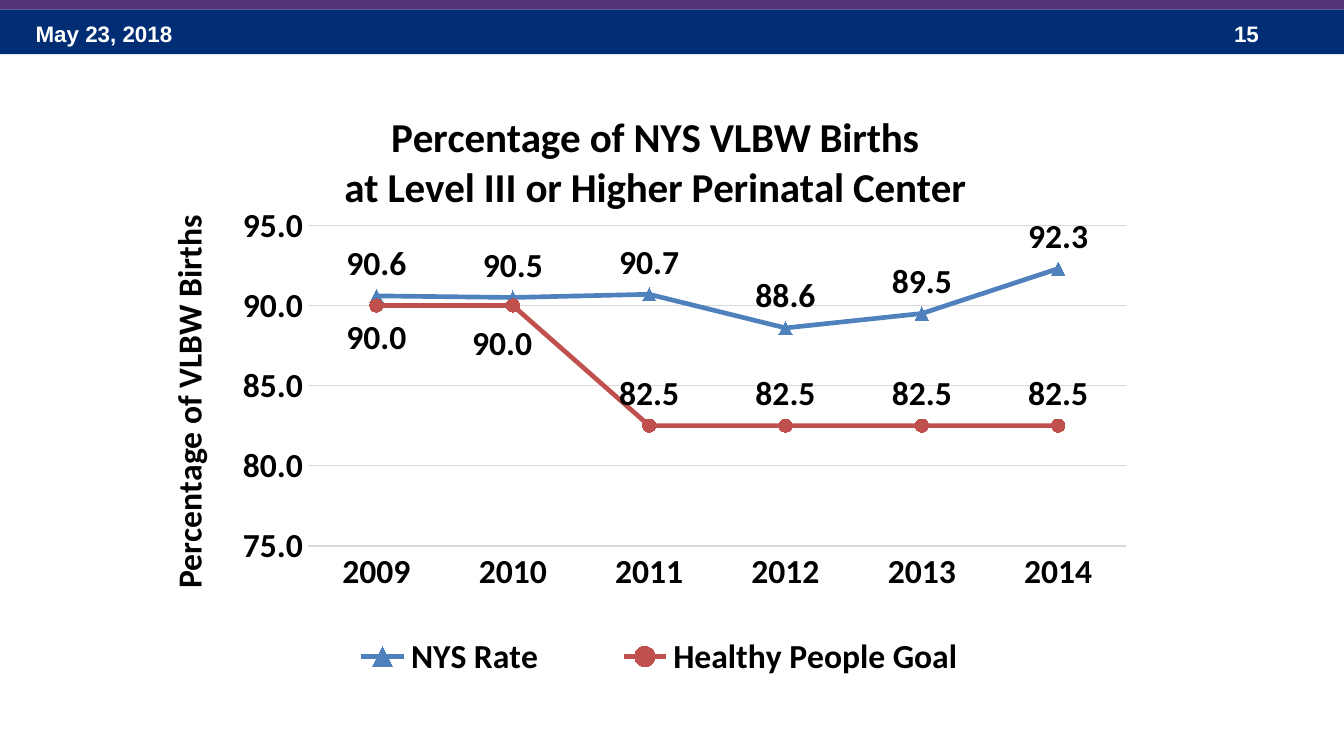
from dataclasses import dataclass

from lxml.etree import SubElement
from pptx import Presentation
from pptx.chart.data import CategoryChartData
from pptx.dml.color import RGBColor
from pptx.enum.chart import (XL_CHART_TYPE, XL_LABEL_POSITION, XL_LEGEND_POSITION,
                             XL_MARKER_STYLE, XL_TICK_MARK)
from pptx.enum.shapes import MSO_SHAPE
from pptx.enum.text import MSO_ANCHOR
from pptx.oxml import parse_xml
from pptx.oxml.ns import nsdecls, qn
from pptx.util import Pt


@dataclass(frozen=True)
class Theme:
    navy: str = "002D73"
    purple: str = "553278"
    white: str = "FFFFFF"
    black: str = "000000"
    grid: str = "D9D9D9"
    rate: str = "4F81BD"
    goal: str = "C0504D"
    header_font: str = "Arial"
    chart_font: str = "Calibri"
    header_size: int = 12
    chart_size: int = 18
    title_size: int = 22


def rgb(value):
    return RGBColor.from_string(value)


def layout_xml(target=None, absolute=True, **fractions):
    """Manual chart layout, in fractions of the chart's width and height."""
    layout = parse_xml(f"<c:layout {nsdecls('c')}><c:manualLayout/></c:layout>")
    manual = layout[0]
    if target:
        SubElement(manual, qn("c:layoutTarget")).set("val", target)
    if absolute:
        for axis in "xy":
            SubElement(manual, qn(f"c:{axis}Mode")).set("val", "edge")
    for name, value in fractions.items():
        SubElement(manual, qn(f"c:{name}")).set("val", str(value))
    return layout


def set_layout(element, after, **options):
    """Put a manual layout in a chart element, behind the child named after."""
    for old in element.findall(qn("c:layout")):
        element.remove(old)
    layout = layout_xml(**options)
    if after is None:
        element.insert(0, layout)
    else:
        element.find(qn(after)).addnext(layout)


class Deck:
    def __init__(self, theme):
        self.theme = theme
        self.prs = Presentation()
        self.prs.slide_width, self.prs.slide_height = Pt(720), Pt(405)
        self.s = self.prs.slides.add_slide(self.prs.slide_layouts[6])

    def font(self, font, name, size, color):
        font.name, font.size, font.bold = name, Pt(size), True
        font.color.rgb = rgb(color)

    def chart_text(self, font, size=None):
        t = self.theme
        self.font(font, t.chart_font, size or t.chart_size, t.black)

    def band(self, top, height, color):
        sp = self.s.shapes.add_shape(MSO_SHAPE.RECTANGLE, 0, Pt(top), Pt(720), Pt(height))
        sp.shadow.inherit = False
        sp.fill.solid()
        sp.fill.fore_color.rgb = rgb(color)
        sp.line.fill.background()

    def header_text(self, left, width, text):
        t = self.theme
        tf = self.s.shapes.add_textbox(Pt(left), Pt(7.2), Pt(width), Pt(21.6)).text_frame
        tf.word_wrap = True
        tf.vertical_anchor = MSO_ANCHOR.MIDDLE
        r = tf.paragraphs[0].add_run()
        r.text = text
        self.font(r.font, t.header_font, t.header_size, t.white)

    def chart_title(self, owner, lines, size, x, y):
        """Title a chart or an axis, one paragraph a line."""
        title = owner.chart_title if hasattr(owner, "chart_title") else owner.axis_title
        tf = title.text_frame
        for i, line in enumerate(lines):
            p = tf.add_paragraph() if i else tf.paragraphs[0]
            r = p.add_run()
            r.text = line
            self.chart_text(r.font, size)
        set_layout(title._element, "c:tx", x=x, y=y)

    def series(self, ser, color, marker):
        ser.smooth = False
        ser.format.line.width = Pt(2.5)
        ser.format.line.color.rgb = rgb(color)
        ser.marker.style, ser.marker.size = marker, 7
        ser.marker.format.fill.solid()
        ser.marker.format.fill.fore_color.rgb = rgb(color)
        ser.marker.format.line.color.rgb = rgb(color)
        labels = ser.data_labels
        labels.show_value = True
        labels.number_format, labels.number_format_is_linked = "#,##0.0", False
        labels.position = XL_LABEL_POSITION.ABOVE
        self.chart_text(labels.font)

    def line_chart(self, box, years, rows):
        """Line chart; rows hold name, values, colour and marker."""
        t = self.theme
        data = CategoryChartData(number_format="#,##0.0")
        data.categories = years
        for name, values, *_ in rows:
            data.add_series(name, values)
        chart = self.s.shapes.add_chart(
            XL_CHART_TYPE.LINE_MARKERS, *map(Pt, box), data).chart
        self.chart_text(chart.font)
        plot = chart.plots[0]
        plot.vary_by_categories = False
        for ser, (_, _, color, marker) in zip(plot.series, rows):
            self.series(ser, color, marker)

        for axis in (chart.category_axis, chart.value_axis):
            axis.major_tick_mark = axis.minor_tick_mark = XL_TICK_MARK.NONE
            self.chart_text(axis.tick_labels.font)
        line = chart.category_axis.format.line
        value_axis = chart.value_axis
        value_axis.minimum_scale, value_axis.maximum_scale = 75, 95
        value_axis.major_unit = 5
        value_axis.tick_labels.number_format = "#,##0.0"
        value_axis.tick_labels.number_format_is_linked = False
        value_axis.format.line.fill.background()
        for rule in (line, value_axis.major_gridlines.format.line):
            rule.color.rgb, rule.width = rgb(t.grid), Pt(0.75)

        chart.has_legend = True
        chart.legend.position = XL_LEGEND_POSITION.BOTTOM
        chart.legend.include_in_layout = False
        self.chart_text(chart.legend.font)
        set_layout(chart.legend._element, "c:legendPos", x=0.16, y=0.9, w=0.7, h=0.1)
        set_layout(chart._chartSpace.chart.plotArea, None,
                   target="inner", x=0.18, y=0.237, w=0.769, h=0.53)
        return chart

    def label_below(self, ser, index, **shift):
        label = ser.points[index].data_label
        self.chart_text(label.font)
        label.position = XL_LABEL_POSITION.BELOW
        dlbl = ser.data_labels._element.findall(qn("c:dLbl"))[index]
        set_layout(dlbl, "c:idx", absolute=False, **shift)


def main():
    t = Theme()
    deck = Deck(t)
    deck.band(5, 24, t.navy)
    deck.header_text(12, 168, "May 23, 2018")
    deck.header_text(654, 54, "15")
    deck.band(-1.5, 6.5, t.purple)

    chart = deck.line_chart(
        (62.6, 44, 570, 324),
        ["2009", "2010", "2011", "2012", "2013", "2014"],
        [("NYS Rate", [90.6, 90.5, 90.7, 88.6, 89.5, 92.3], t.rate, XL_MARKER_STYLE.TRIANGLE),
         ("Healthy People Goal", [90, 90] + [82.5] * 4, t.goal, XL_MARKER_STYLE.CIRCLE)])
    deck.chart_title(chart, ["Percentage of NYS VLBW Births",
                             "at Level III or Higher Perinatal Center"],
                     t.title_size, 0.21, 0.04)
    deck.chart_title(chart.value_axis, ["Percentage of VLBW Births"], t.chart_size, 0.04, 0.21)
    goal = chart.plots[0].series[1]
    deck.label_below(goal, 0, x=0, y=0)
    deck.label_below(goal, 1, x=-0.01, y=0.01)
    deck.prs.save("out.pptx")


if __name__ == "__main__":
    main()
